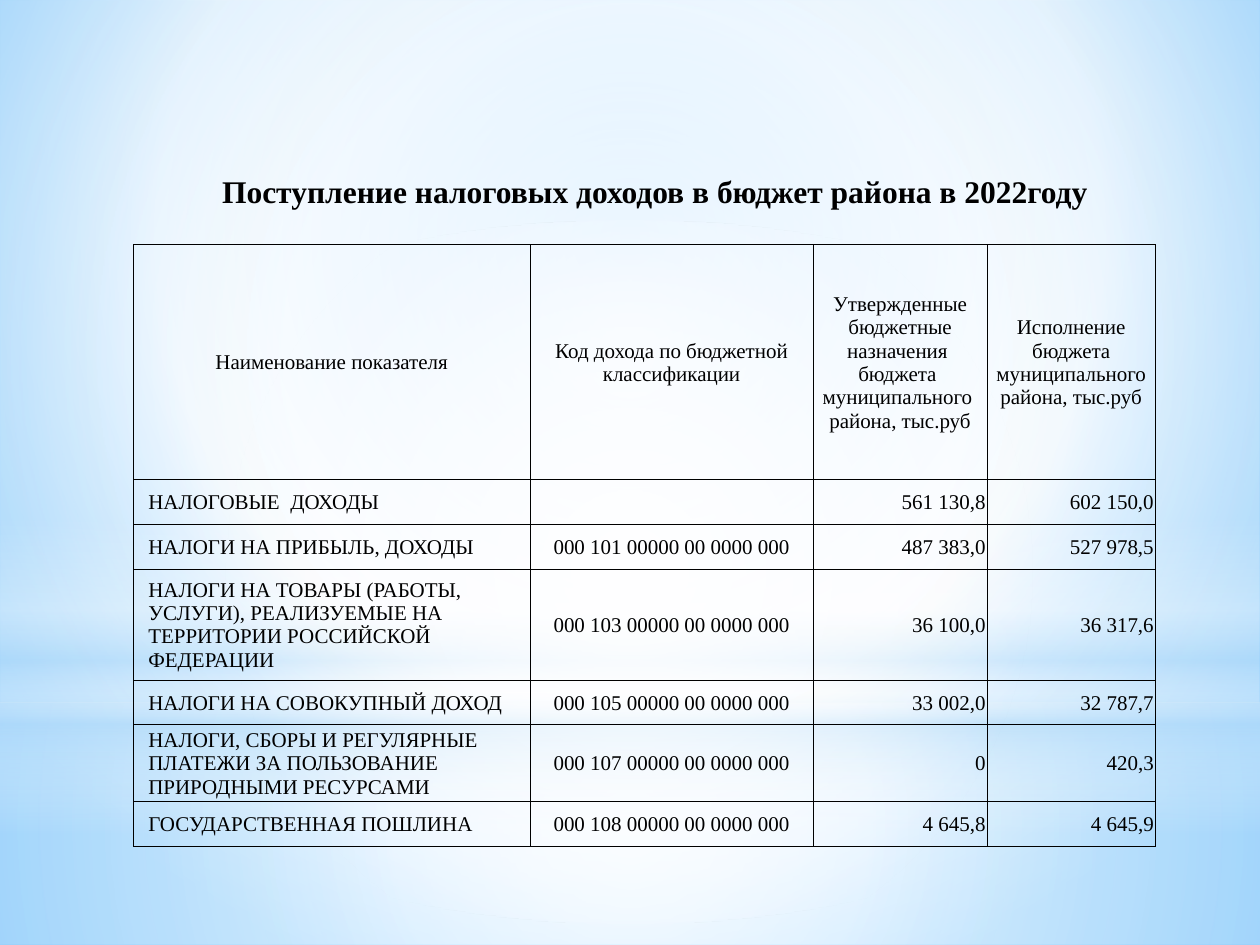
from typing import NamedTuple

from lxml.etree import SubElement
from pptx import Presentation
from pptx.dml.color import RGBColor
from pptx.enum.shapes import MSO_SHAPE
from pptx.enum.text import MSO_ANCHOR, PP_ALIGN
from pptx.oxml.ns import qn
from pptx.util import Cm, Pt


class Blend(NamedTuple):
    stops: list
    rect: tuple = (50, 50, 50, 50)
    angle: int | None = None


class Veil(NamedTuple):
    kind: int
    top: float
    high: float
    blend: Blend


class Row(NamedTuple):
    high: float
    texts: tuple


WIDE, TALL = 25.4, 19.05
INK, WHITE, PALE = "000000", "FFFFFF", "B4DCFA"
FACE = "Times New Roman"
COLS = (8, 5.7, 3.51, 3.39)
LEFT, MID, RIGHT = PP_ALIGN.LEFT, PP_ALIGN.CENTER, PP_ALIGN.RIGHT
HEAD = (MID, MID, MID, MID)
BODY = (LEFT, MID, RIGHT, RIGHT)

BACK = Blend([(0, "9ED5FF", 100), (60, WHITE, 100), (100, "5BB9FF", 100)], (20, 10, 20, 60))
VEILS = [
    Veil(MSO_SHAPE.RECTANGLE, 14.17, 4.88, Blend([(0, WHITE, 91), (37, WHITE, 76), (100, PALE, 79)])),
    Veil(MSO_SHAPE.RECTANGLE, 0, 14.17, Blend([(0, WHITE, 89), (48, WHITE, 62), (100, PALE, 79)])),
    Veil(MSO_SHAPE.RECTANGLE, 10.46, 6.35, Blend(
        [(0, WHITE, 0), (29, WHITE, 30), (45, PALE, 40), (55, WHITE, 26), (65, PALE, 60), (100, WHITE, 0)],
        angle=90)),
    Veil(MSO_SHAPE.OVAL, 4.45, 14.17, Blend([(0, WHITE, 100), (56, WHITE, 0)])),
]
ROWS = [
    Row(4.74, ("Наименование показателя", "Код дохода по бюджетной классификации",
               "Утвержденные бюджетные назначения  бюджета  муниципального  района, тыс.руб",
               "Исполнение бюджета муниципального района, тыс.руб")),
    Row(0.9, ("НАЛОГОВЫЕ  ДОХОДЫ", "", "561 130,8", "602 150,0")),
    Row(0.9, ("НАЛОГИ НА ПРИБЫЛЬ, ДОХОДЫ", "000 101 00000 00 0000 000", "487 383,0", "527 978,5")),
    Row(2.24, ("НАЛОГИ НА ТОВАРЫ (РАБОТЫ, УСЛУГИ), РЕАЛИЗУЕМЫЕ НА ТЕРРИТОРИИ РОССИЙСКОЙ ФЕДЕРАЦИИ",
               "000 103 00000 00 0000 000", "36 100,0", "36 317,6")),
    Row(0.9, ("НАЛОГИ НА СОВОКУПНЫЙ ДОХОД", "000 105 00000 00 0000 000", "33 002,0", "32 787,7")),
    Row(1.55, ("НАЛОГИ, СБОРЫ И РЕГУЛЯРНЫЕ ПЛАТЕЖИ ЗА ПОЛЬЗОВАНИЕ ПРИРОДНЫМИ РЕСУРСАМИ",
               "000 107 00000 00 0000 000", "0", "420,3")),
    Row(0.9, ("ГОСУДАРСТВЕННАЯ ПОШЛИНА", "000 108 00000 00 0000 000", "4 645,8", "4 645,9")),
]


def tint(hue: str) -> RGBColor:
    return RGBColor.from_string(hue)


def style(item, form: dict) -> None:
    for name, value in form.items():
        setattr(item, name, value)


def write(part, align, size: int, bold: bool = False) -> None:
    part.alignment = align
    for run in part.runs:
        style(run.font, {"name": FACE, "size": Pt(size), "bold": bold})
        run.font.color.rgb = tint(INK)


def paint(owner, fill, blend: Blend) -> None:
    fill.solid()
    plain = owner._element.find(".//" + qn("a:solidFill"))
    grad = plain.makeelement(qn("a:gradFill"), {"rotWithShape": "1"})
    stops = SubElement(grad, qn("a:gsLst"))
    for place, hue, alpha in blend.stops:
        stop = SubElement(stops, qn("a:gs"), pos=str(place * 1000))
        color = SubElement(stop, qn("a:srgbClr"), val=hue)
        if alpha < 100:
            SubElement(color, qn("a:alpha"), val=str(alpha * 1000))
    if blend.angle is None:
        ring = SubElement(grad, qn("a:path"), {"path": "circle"})
        sides = {side: str(value * 1000) for side, value in zip("ltrb", blend.rect)}
        SubElement(ring, qn("a:fillToRect"), sides)
    else:
        SubElement(grad, qn("a:lin"), ang=str(blend.angle * 60000), scaled="0")
    plain.getparent().replace(plain, grad)


def drape(slide, veil: Veil) -> None:
    shape = slide.shapes.add_shape(veil.kind, 0, Cm(veil.top), Cm(WIDE), Cm(veil.high))
    shape.shadow.inherit = False
    shape.line.fill.background()
    paint(shape, shape.fill, veil.blend)


def frame(cell) -> None:
    props = cell._tc.get_or_add_tcPr()
    for spot, side in enumerate("LRTB"):
        line = props.makeelement(qn(f"a:ln{side}"), {"w": str(Pt(0.5))})
        SubElement(SubElement(line, qn("a:solidFill")), qn("a:srgbClr"), val=INK)
        props.insert(spot, line)


def chart_rows(slide) -> None:
    high = sum(row.high for row in ROWS)
    table = slide.shapes.add_table(len(ROWS), len(COLS), Cm(2.69), Cm(4.93), Cm(sum(COLS)), Cm(high)).table
    style(table, {"first_row": False, "horz_banding": False})
    for col, wide in zip(table.columns, COLS):
        col.width = Cm(wide)
    for y, row in enumerate(ROWS):
        table.rows[y].height = Cm(row.high)
        for x, (text, align) in enumerate(zip(row.texts, BODY if y else HEAD)):
            cell = table.cell(y, x)
            style(cell, {
                "text": text,
                "vertical_anchor": MSO_ANCHOR.MIDDLE,
                "margin_left": Cm(0.3 if align == LEFT else 0.03),
                "margin_right": Cm(0.03),
                "margin_top": Cm(0.03),
                "margin_bottom": 0,
            })
            cell.fill.background()
            frame(cell)
            write(cell.text_frame.paragraphs[0], align, 12)


def head(slide) -> None:
    title = slide.shapes.title
    style(title, {"left": Cm(2.31), "top": Cm(3.33), "width": Cm(21.79), "height": Cm(1.02)})
    title.text_frame.text = "Поступление налоговых доходов в бюджет района в 2022году"
    write(title.text_frame.paragraphs[0], MID, 18, True)
    slide.shapes._spTree.append(title._element)


def main() -> None:
    deck = Presentation()
    style(deck, {"slide_width": Cm(WIDE), "slide_height": Cm(TALL)})
    slide = deck.slides.add_slide(deck.slide_layouts[5])
    paint(slide, slide.background.fill, BACK)
    for veil in VEILS:
        drape(slide, veil)
    chart_rows(slide)
    head(slide)
    deck.save("out.pptx")


if __name__ == "__main__":
    main()
